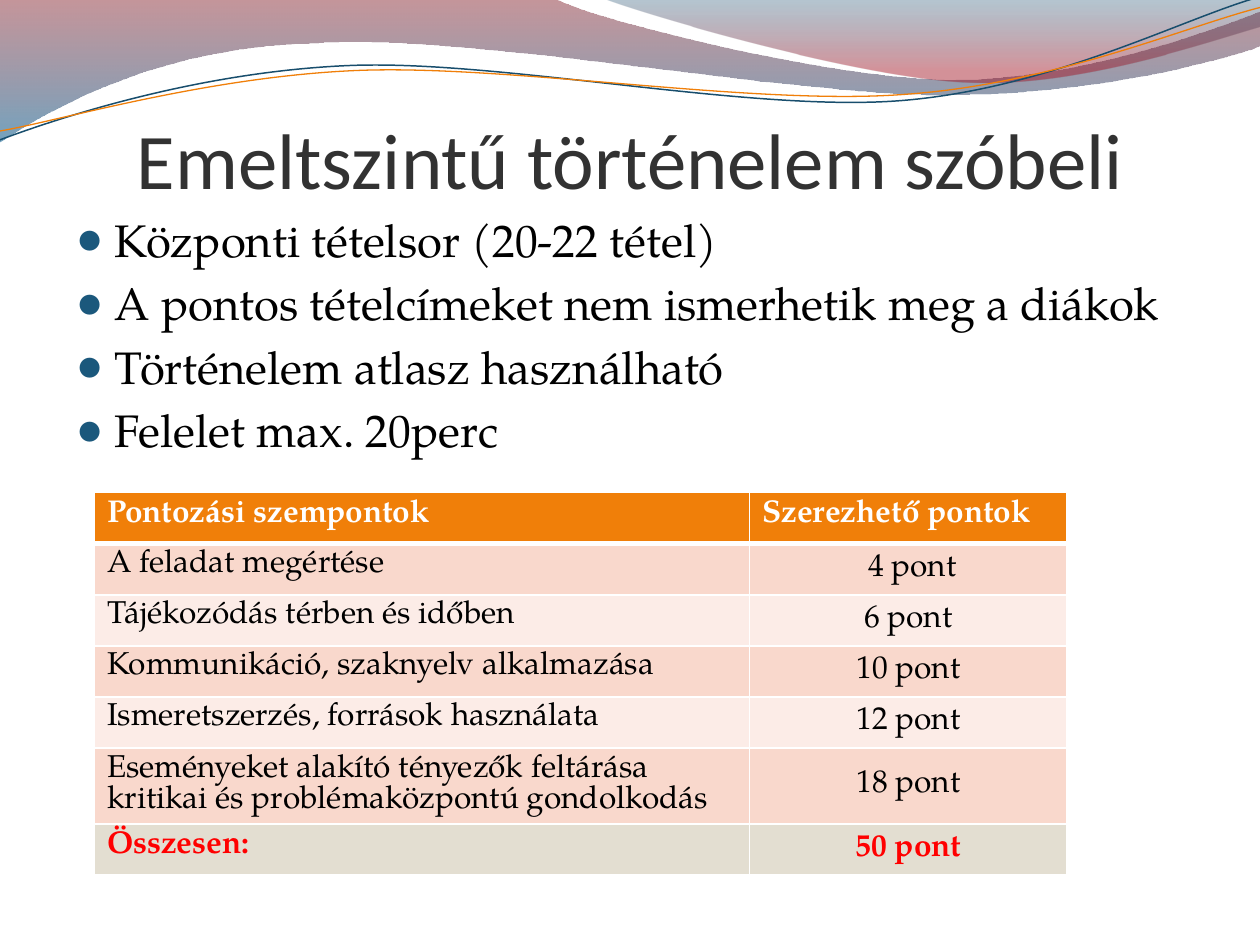
import math

from lxml import etree
from pptx import Presentation
from pptx.dml.color import RGBColor
from pptx.enum.text import MSO_ANCHOR, PP_ALIGN
from pptx.oxml import parse_xml
from pptx.oxml.ns import nsdecls, qn
from pptx.util import Inches, Pt

BLANK_LAYOUT = 6
CENTER = PP_ALIGN.CENTER
LEFT = PP_ALIGN.LEFT
TOP = MSO_ANCHOR.TOP
MIDDLE = MSO_ANCHOR.MIDDLE
BOTTOM = MSO_ANCHOR.BOTTOM
BODY_FONT = "TeX Gyre Pagella"
TITLE_FONT = "Calibri"
CURVE_ROTATION = 357.3

WIDE_WAVE = [
    [(0, 0)],
    [(4.4, -0.01)],
    [(4.76, 0.17), (6.64, 0.63), (7.58, 0.63)],
    [(8.53, 0.63), (9.58, 0.26), (10, 0.09)],
    [(10.01, 0.36)],
    [(9.83, 0.44), (8.7, 0.76), (7.46, 0.75)],
    [(6.22, 0.75), (3.82, 0.28), (2.57, 0.34)],
    [(1.29, 0.36), (0.46, 0.83), (-0.01, 1.13)],
    [(0, 0)],
]
RIGHT_WAVE = [
    [(4.79, -0.01)],
    [(5.09, 0.11), (6.82, 0.62), (7.69, 0.65)],
    [(8.56, 0.69), (9.61, 0.32), (10, 0.21)],
    [(10, 0)],
    [(4.79, -0.01)],
]
BLUE_CURVE = [
    [(0, 1.11)],
    [(0.48, 0.93), (1.58, 0.57), (2.77, 0.52)],
    [(3.95, 0.47), (5.93, 0.89), (7.13, 0.8)],
    [(8.33, 0.71), (9.38, 0.15), (9.98, -0.02)],
]
ORANGE_CURVE = [
    [(0, 1.04)],
    [(0.47, 0.96), (1.64, 0.61), (2.83, 0.56)],
    [(4.03, 0.51), (5.97, 0.84), (7.17, 0.75)],
    [(8.36, 0.67), (9.41, 0.21), (10, 0.06)],
]

BULLETS = [
    "Központi tételsor (20-22 tétel)",
    "A pontos tételcímeket nem ismerhetik meg a diákok",
    "Történelem atlasz használható",
    "Felelet max. 20perc",
]
SCORES = [
    ("Pontozási szempontok", "Szerezhető pontok"),
    ("A feladat megértése", " 4 pont"),
    ("Tájékozódás térben és időben", "6 pont"),
    ("Kommunikáció, szaknyelv alkalmazása", "10 pont"),
    ("Ismeretszerzés, források használata", "12 pont"),
    ("Eseményeket alakító tényezők feltárása kritikai és problémaközpontú gondolkodás", "18 pont"),
    ("Összesen:", "50 pont"),
]


def color(value):
    return RGBColor.from_string(value)


def rotate_segments(segments, center, degrees):
    center_x, center_y = center
    cosine, sine = math.cos(math.radians(degrees)), math.sin(math.radians(degrees))
    return [
        [
            (
                center_x + (x - center_x) * cosine - (y - center_y) * sine,
                center_y + (x - center_x) * sine + (y - center_y) * cosine,
            )
            for x, y in segment
        ]
        for segment in segments
    ]


def add_outline(slide, segments, close):
    start, *others = [
        (Inches(x), Inches(y)) for segment in segments for x, y in segment
    ]
    builder = slide.shapes.build_freeform(*start)
    builder.add_line_segments(others, close=close)
    shape = builder.convert_to_shape()
    shape.shadow.inherit = False
    lines = iter(list(shape._element.iter(qn("a:lnTo"))))
    for segment in segments[1:]:
        steps = [next(lines) for _ in segment]
        if len(steps) == 3:
            curve = etree.Element(qn("a:cubicBezTo"))
            steps[0].addprevious(curve)
            for step in steps:
                curve.append(step[0])
                step.getparent().remove(step)
    return shape


def add_wave(slide, segments, stops):
    shape = add_outline(slide, segments, True)
    shape.line.fill.background()
    stop_xml = "".join(
        f'<a:gs pos="{position * 1000}"><a:srgbClr val="{value}">'
        f'<a:alpha val="{alpha * 1000}"/></a:srgbClr></a:gs>'
        for position, value, alpha in stops
    )
    gradient = parse_xml(
        f'<a:gradFill {nsdecls("a")}><a:gsLst>{stop_xml}</a:gsLst>'
        '<a:lin ang="5400000" scaled="0"/></a:gradFill>'
    )
    shape._element.spPr.find(qn("a:custGeom")).addnext(gradient)


def add_curve(slide, segments, center, line_color, width):
    level_segments = rotate_segments(segments, center, -CURVE_ROTATION)
    shape = add_outline(slide, level_segments, False)
    shape.rotation = CURVE_ROTATION
    shape.fill.background()
    shape.line.color.rgb = color(line_color)
    shape.line.width = Pt(width)


def format_runs(paragraph, font_name, size, text_color, bold=False):
    for run in paragraph.runs:
        run.font.name = font_name
        run.font.size = Pt(size)
        run.font.bold = bold
        run.font.color.rgb = color(text_color)


def add_title(slide, text):
    shape = slide.shapes.add_textbox(Inches(0.5), Inches(0.92), Inches(9), Inches(0.71))
    text_frame = shape.text_frame
    text_frame.word_wrap = True
    text_frame.vertical_anchor = BOTTOM
    text_frame.margin_left = text_frame.margin_right = text_frame.margin_bottom = 0
    text_frame.text = text
    paragraph = text_frame.paragraphs[0]
    paragraph.alignment = CENTER
    format_runs(paragraph, TITLE_FONT, 45, "323232")


def add_bullet(paragraph):
    properties = paragraph._p.get_or_add_pPr()
    properties.set("marL", str(Inches(0.3)))
    properties.set("indent", str(Inches(-0.3)))
    space_before = etree.SubElement(properties, qn("a:spcBef"))
    etree.SubElement(space_before, qn("a:spcPct"), val="20000")
    bullet_color = etree.SubElement(properties, qn("a:buClr"))
    etree.SubElement(bullet_color, qn("a:srgbClr"), val="1B587C")
    etree.SubElement(properties, qn("a:buSzPct"), val="95000")
    etree.SubElement(properties, qn("a:buFont"), typeface=TITLE_FONT)
    etree.SubElement(properties, qn("a:buChar"), char="●")


def add_bullet_list(slide, items):
    shape = slide.shapes.add_textbox(Inches(0.51), Inches(1.63), Inches(9), Inches(4.8))
    text_frame = shape.text_frame
    text_frame.word_wrap = True
    text_frame.text = "\n".join(items)
    for paragraph in text_frame.paragraphs:
        add_bullet(paragraph)
        format_runs(paragraph, BODY_FONT, 26, "000000")


def set_borders(cell, top_width, bottom_width):
    widths = {"lnL": 1, "lnR": 1, "lnT": top_width, "lnB": bottom_width}
    properties = cell._tc.get_or_add_tcPr()
    for index, (side, width) in enumerate(widths.items()):
        properties.insert(index, parse_xml(
            f'<a:{side} {nsdecls("a")} w="{Pt(width)}"><a:solidFill>'
            f'<a:srgbClr val="FFFFFF"/></a:solidFill></a:{side}>'
        ))


def row_style(row, last_row):
    if row == 0:
        return "F07F09", "FFFFFF", True
    if row == last_row:
        return "E3DED1", "FF0000", True
    return ("F9D8CC" if row % 2 else "FCECE7"), "000000", False


def add_score_table(slide, rows):
    row_height = Pt(29.2)
    frame = slide.shapes.add_table(
        len(rows), 2, Inches(0.75), Inches(3.91), Inches(7.72), row_height * len(rows)
    )
    table = frame.table
    table.columns[0].width = Inches(5.2)
    table.columns[1].width = Inches(2.52)
    for row, texts in enumerate(rows):
        table.rows[row].height = row_height
        fill_color, text_color, bold = row_style(row, len(rows) - 1)
        for column, text in enumerate(texts):
            cell = table.cell(row, column)
            centered = row > 0 and column == 1
            cell.text_frame.text = text
            cell.vertical_anchor = MIDDLE if centered else TOP
            cell.fill.solid()
            cell.fill.fore_color.rgb = color(fill_color)
            set_borders(cell, 3 if row == 1 else 1, 3 if row == 0 else 1)
            paragraph = cell.text_frame.paragraphs[0]
            paragraph.alignment = CENTER if centered else LEFT
            paragraph.line_spacing = Pt(18)
            format_runs(paragraph, BODY_FONT, 18, text_color, bold)


def main():
    presentation = Presentation()
    presentation.slide_width = Inches(10)
    presentation.slide_height = Inches(7.5)
    slide = presentation.slides.add_slide(presentation.slide_layouts[BLANK_LAYOUT])
    add_wave(slide, WIDE_WAVE, [(0, "7E1621", 45), (100, "005689", 55)])
    add_wave(slide, RIGHT_WAVE, [(0, "094467", 30), (80, "A10F1F", 45)])
    add_curve(slide, BLUE_CURVE, (4.99, 0.57), "184E6D", 0.85)
    add_curve(slide, ORANGE_CURVE, (5, 0.59), "F07F09", 0.75)
    add_title(slide, "Emeltszintű történelem szóbeli")
    add_bullet_list(slide, BULLETS)
    add_score_table(slide, SCORES)
    presentation.save("out.pptx")


if __name__ == "__main__":
    main()
